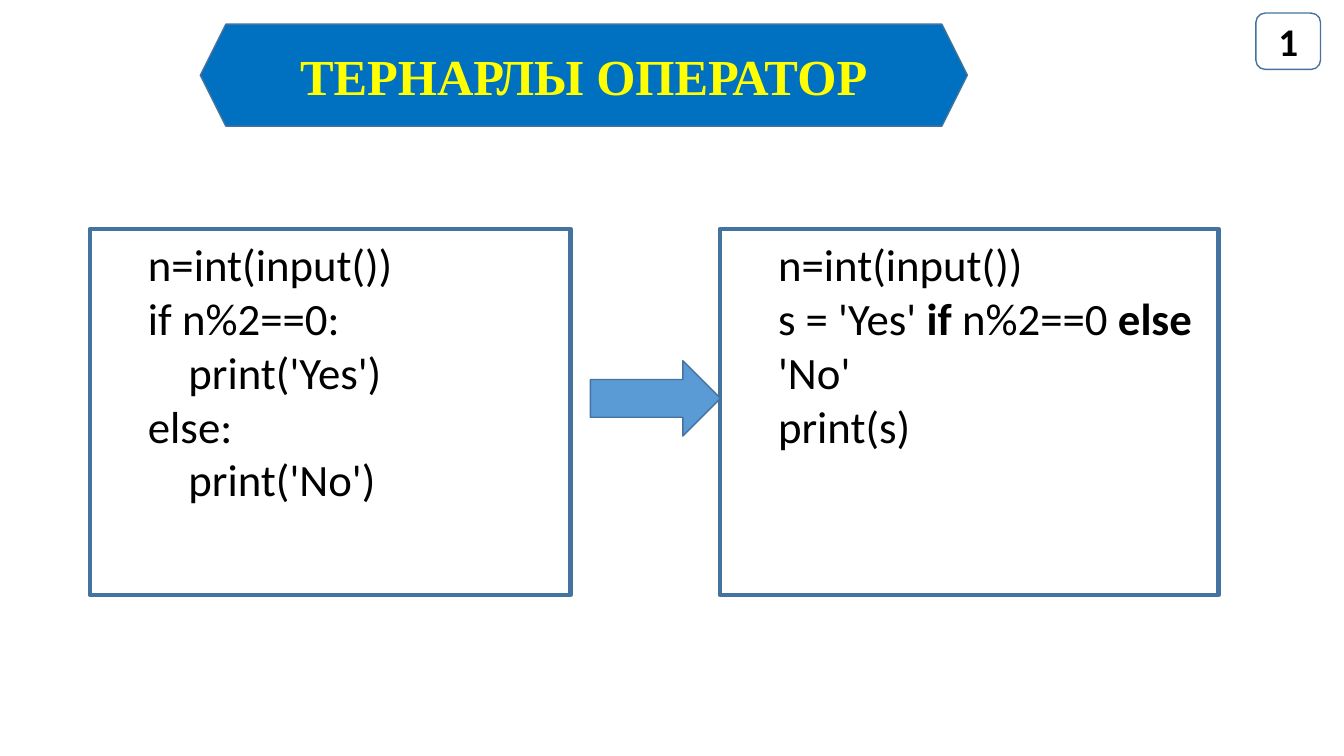
from dataclasses import dataclass

from pptx import Presentation
from pptx.dml.color import RGBColor
from pptx.enum.shapes import MSO_SHAPE
from pptx.enum.text import MSO_ANCHOR, PP_ALIGN
from pptx.util import Cm, Pt

OUTLINE = "43739E"
CODE_MARGIN = 1.27
CODE_STEP = 1.02


def rgb(value: str) -> RGBColor:
    return RGBColor.from_string(value)


@dataclass
class Run:
    text: str
    bold: bool = False


@dataclass
class Line:
    runs: list[Run]
    depth: int = 0


@dataclass
class Block:
    kind: MSO_SHAPE
    left: float
    top: float
    width: float
    height: float
    fill: str | None = None
    line_width: float = 1


CODE_FONT = {"name": "Calibri", "size": Pt(32)}
TITLE_FONT = {"name": "Times New Roman", "size": Pt(36)}
NUMBER_FONT = {"name": "Calibri", "size": Pt(28)}

CODE_FRAME = {
    "vertical_anchor": MSO_ANCHOR.TOP,
    "margin_left": Cm(0.2),
    "margin_top": Cm(0.2),
    "margin_right": Cm(0.2),
    "margin_bottom": 0,
}


def set_values(target: object, values: dict) -> None:
    for name, value in values.items():
        setattr(target, name, value)


def draw_block(slide, block: Block):
    box = [Cm(n) for n in (block.left, block.top, block.width, block.height)]
    shape = slide.shapes.add_shape(block.kind, *box)
    shape.shadow.inherit = False
    if block.fill:
        shape.fill.solid()
        shape.fill.fore_color.rgb = rgb(block.fill)
    else:
        shape.fill.background()
    shape.line.color.rgb = rgb(OUTLINE)
    shape.line.width = Pt(block.line_width)
    return shape


def add_run(paragraph, run: Run, font: dict, color: str) -> None:
    part = paragraph.add_run()
    part.text = run.text
    set_values(part.font, font | {"bold": run.bold})
    part.font.color.rgb = rgb(color)


def draw_label(slide, block: Block, text: str, font: dict, color: str) -> None:
    frame = draw_block(slide, block).text_frame
    set_values(frame, {"word_wrap": True, "vertical_anchor": MSO_ANCHOR.MIDDLE})
    paragraph = frame.paragraphs[0]
    paragraph.alignment = PP_ALIGN.CENTER
    add_run(paragraph, Run(text, bold=True), font, color)


def draw_code(slide, block: Block, lines: list[Line]) -> None:
    frame = draw_block(slide, block).text_frame
    set_values(frame, CODE_FRAME | {"word_wrap": True})
    for index, line in enumerate(lines):
        paragraph = frame.add_paragraph() if index else frame.paragraphs[0]
        set_values(paragraph, {"level": 1, "alignment": PP_ALIGN.LEFT})
        # Code indentation as a paragraph margin
        properties = paragraph._p.get_or_add_pPr()
        properties.set("marL", str(Cm(CODE_MARGIN + line.depth * CODE_STEP)))
        properties.set("indent", "0")
        for run in line.runs:
            add_run(paragraph, run, CODE_FONT, "000000")


IF_ELSE_CODE = [
    Line([Run("n=int(input())")]),
    Line([Run("if n%2==0:")]),
    Line([Run("print('Yes')")], depth=1),
    Line([Run("else:")]),
    Line([Run("print('No')")], depth=1),
]
TERNARY_CODE = [
    Line([Run("n=int(input())")]),
    Line([
        Run("s = 'Yes' "),
        Run("if ", bold=True),
        Run("n%2==0 "),
        Run("else", bold=True),
        Run(" 'No'"),
    ]),
    Line([Run("print(s)")]),
]


def main() -> None:
    deck = Presentation()
    deck.slide_width, deck.slide_height = Cm(33.87), Cm(19.05)
    slide = deck.slides.add_slide(deck.slide_layouts[6])

    # Title banner
    banner = Block(MSO_SHAPE.HEXAGON, 5.05, 0.61, 19.33, 2.57, fill="0070C0")
    draw_label(slide, banner, "ТЕРНАРЛЫ ОПЕРАТОР", TITLE_FONT, "FFFF00")

    # Code before and after
    for left, width, code in ((2.26, 12.12, IF_ELSE_CODE), (18.14, 12.57, TERNARY_CODE)):
        panel = Block(MSO_SHAPE.RECTANGLE, left, 5.77, width, 9.22, line_width=3)
        draw_code(slide, panel, code)

    # Arrow between the two forms
    draw_block(slide, Block(MSO_SHAPE.RIGHT_ARROW, 14.88, 9.09, 3.28, 1.9, fill="5B9BD5"))

    # Slide number
    badge = Block(MSO_SHAPE.ROUNDED_RECTANGLE, 31.65, 0.33, 1.63, 1.42)
    draw_label(slide, badge, "1", NUMBER_FONT, "000000")

    deck.save("out.pptx")


if __name__ == "__main__":
    main()
